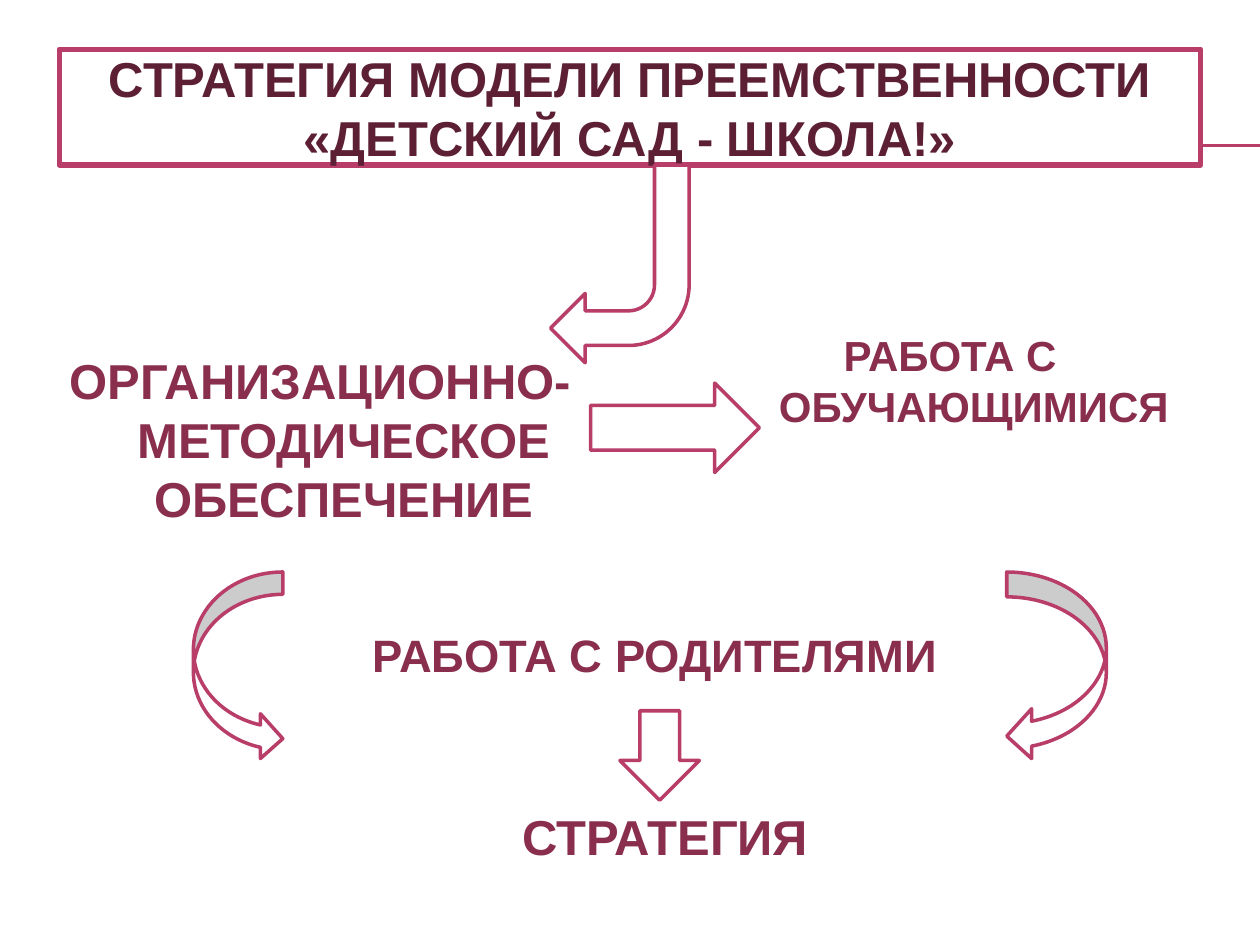
from lxml import etree
from pptx import Presentation
from pptx.dml.color import RGBColor
from pptx.enum import shapes, text
from pptx.oxml import ns
from pptx.util import Pt

THEME = {
    "font": "Arial", "title": "5C1F34", "label": "8A2E4E",
    "accent": "B83D68", "paper": "FFFFFF",
    "large": 28, "parents": 25.9, "medium": 24,
    "frame": 3, "outline": 2, "rule": 0.75, "indent": 27,
}
SLIDE = (720, 540)
TITLE = ("СТРАТЕГИЯ МОДЕЛИ ПРЕЕМСТВЕННОСТИ «ДЕТСКИЙ САД - ШКОЛА!»", (33.8, 28.1, 652.3, 66.2))
METHODS = ("ОРГАНИЗАЦИОННО-МЕТОДИЧЕСКОЕ ОБЕСПЕЧЕНИЕ", (0, 196.6, 365.8, 153.4))
LABELS = [
    ("РАБОТА С ОБУЧАЮЩИМИСЯ", "medium", (399.6, 185, 286.6, 147.6)),
    ("РАБОТА С РОДИТЕЛЯМИ", "parents", (195.8, 355, 357.1, 45.4)),
    ("СТРАТЕГИЯ", "large", (201.6, 457.2, 357.1, 45.4)),
]
KIND = shapes.MSO_SHAPE
ARROWS = [
    (KIND.BENT_ARROW, 180, (314.6, 94.3, 79.2, 113)),
    (KIND.RIGHT_ARROW, 0, (337.5, 218.9, 96.5, 51.1)),
    (KIND.CURVED_RIGHT_ARROW, 0, (110.5, 326.9, 51.1, 108)),
    (KIND.CURVED_LEFT_ARROW, 0, (575.3, 326.9, 56.9, 108)),
    (KIND.RIGHT_ARROW, 90, (351.4, 409, 51.1, 45.4)),
]
RULE_LEFT = 40.3
RULE_TOPS = (82.8, 83.5)


def color(key):
    return RGBColor.from_string(THEME[key])


def place(part, box):
    part.left, part.top, part.width, part.height = map(Pt, box)


def outline(part, weight):
    part.fill.solid()
    part.fill.fore_color.rgb = color("paper")
    part.line.color.rgb = color("accent")
    part.line.width = Pt(THEME[weight])


def write(part, wording, size, ink, anchor, indent=0):
    frame = part.text_frame
    frame.text = wording
    frame.word_wrap = True
    frame.auto_size = text.MSO_AUTO_SIZE.NONE
    frame.vertical_anchor = anchor
    paragraph = frame.paragraphs[0]
    paragraph.alignment = text.PP_ALIGN.CENTER
    paragraph.space_before = Pt(0)
    properties = paragraph._p.get_or_add_pPr()
    properties.set("marL", str(Pt(indent)))
    properties.set("indent", str(Pt(-indent)))
    etree.SubElement(properties, ns.qn("a:buNone"))
    font = paragraph.runs[0].font
    font.name, font.size, font.bold = THEME["font"], Pt(THEME[size]), True
    font.color.rgb = color(ink)


def write_label(part, wording, size):
    write(part, wording, size, "label", text.MSO_ANCHOR.TOP, THEME["indent"])


def add_rule(slide, top, depth):
    rule = slide.shapes.add_connector(
        shapes.MSO_CONNECTOR.STRAIGHT, Pt(RULE_LEFT), Pt(top), Pt(SLIDE[0]), Pt(top))
    rule.line.color.rgb = color("accent")
    rule.line.width = Pt(THEME["rule"])
    etree.SubElement(rule.element.spPr, ns.qn("a:effectLst"))
    rule.element.getparent().insert(depth, rule.element)


def add_arrow(slide, kind, turn, box):
    arrow = slide.shapes.add_shape(kind, *map(Pt, box))
    arrow.rotation = turn
    arrow.shadow.inherit = False
    outline(arrow, "outline")


def main():
    deck = Presentation()
    deck.slide_width, deck.slide_height = map(Pt, SLIDE)
    slide = deck.slides.add_slide(deck.slide_layouts[1])

    heading, methods = slide.placeholders
    place(heading, TITLE[1])
    outline(heading, "frame")
    write(heading, TITLE[0], "large", "title", text.MSO_ANCHOR.MIDDLE)
    place(methods, METHODS[1])
    write_label(methods, METHODS[0], "large")

    for depth, top in enumerate(RULE_TOPS, 2):
        add_rule(slide, top, depth)
    for arrow in ARROWS:
        add_arrow(slide, *arrow)
    for wording, size, box in LABELS:
        write_label(slide.shapes.add_textbox(*map(Pt, box)), wording, size)

    deck.save("out.pptx")


if __name__ == "__main__":
    main()
